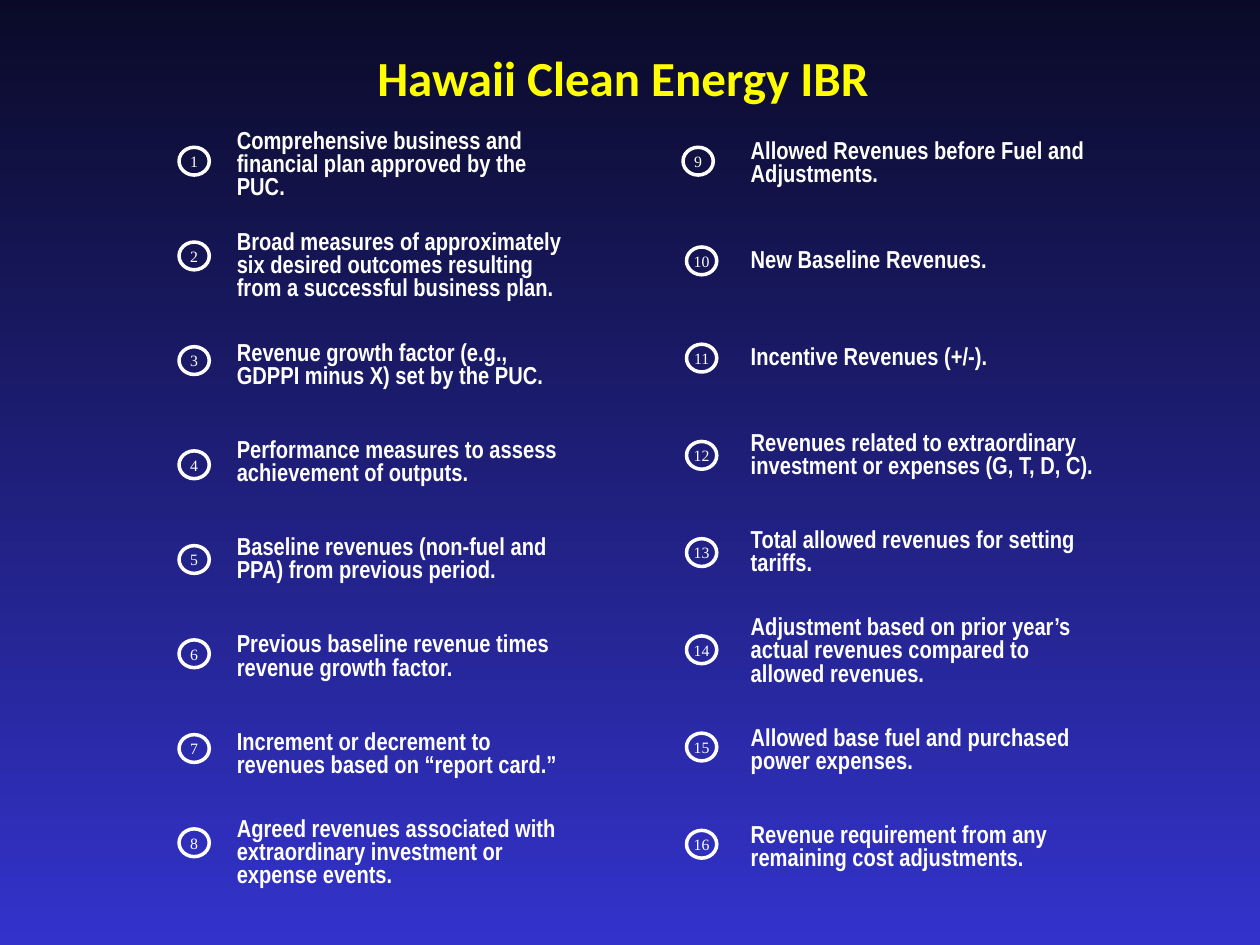
import dataclasses

import pptx
import pptx.dml.color
import pptx.enum.shapes
import pptx.enum.text
import pptx.oxml.ns
import pptx.util

Cm = pptx.util.Cm
Pt = pptx.util.Pt
Rgb = pptx.dml.color.RGBColor
Align = pptx.enum.text.PP_ALIGN
Anchor = pptx.enum.text.MSO_ANCHOR


@dataclasses.dataclass(frozen=True)
class TextStyle:
    """Typeface, size, colour and weight of one kind of text."""
    font: str
    size: int
    color: str
    bold: bool


@dataclasses.dataclass(frozen=True)
class Theme:
    """Colours and text styles of the slide."""
    top: str = "0A0A28"
    bottom: str = "3333CC"
    outline: str = "FFFFFF"
    title: TextStyle = TextStyle("Calibri", 28, "FFFF00", True)
    item: TextStyle = TextStyle("Arial Narrow", 14, "FFFFFF", True)
    number: TextStyle = TextStyle("Times New Roman", 9, "FFFFFF", False)


THEME = Theme()
NO_GRID_STYLE = "{2D5ABB26-0587-4C30-8999-92F81FD0307C}"
ROW_HEIGHT, TALL_ROW_HEIGHT = 1.96, 2.03
LEFT_ITEMS = [
    "Comprehensive business and financial plan approved by the PUC.",
    "Broad measures of approximately six desired outcomes resulting from a successful business plan.",
    "Revenue growth factor (e.g., GDPPI minus X) set by the PUC.",
    "Performance measures to assess achievement of outputs.",
    "Baseline revenues (non-fuel and PPA) from previous period.",
    "Previous baseline revenue times revenue growth factor.",
    "Increment or decrement to revenues based on “report card.”",
    "Agreed revenues associated with extraordinary investment or expense events.",
]
RIGHT_ITEMS = [
    "Allowed Revenues before Fuel and Adjustments.",
    "New Baseline Revenues.",
    "Incentive Revenues (+/-).",
    "Revenues related to extraordinary investment or expenses (G, T, D, C).",
    "Total allowed revenues for setting tariffs.",
    "Adjustment based on prior year’s actual revenues compared to allowed revenues.",
    "Allowed base fuel and purchased power expenses.",
    "Revenue requirement from any remaining cost adjustments.",
]


def paint_background(page):
    """Fill the page with a vertical gradient."""
    fill = page.background.fill
    fill.gradient()
    fill.gradient_angle = 270
    for stop, color, position in zip(fill.gradient_stops, (THEME.top, THEME.bottom), (0, 1)):
        stop.color.rgb = Rgb.from_string(color)
        stop.position = position


def write(frame, text, style, align=Align.LEFT):
    """Write one styled run into the frame's first paragraph."""
    para = frame.paragraphs[0]
    para.alignment = align
    span = para.add_run()
    span.text = text
    span.font.name = style.font
    span.font.size = Pt(style.size)
    span.font.bold = style.bold
    span.font.color.rgb = Rgb.from_string(style.color)


def add_title(page, text):
    """Add the centred slide title."""
    box = page.shapes.add_textbox(Cm(3.18), Cm(0.84), Cm(18.75), Cm(1.45))
    box.text_frame.word_wrap = True
    write(box.text_frame, text, THEME.title, Align.CENTER)


def add_items(page, left, width, items, tall_rows):
    """Add a borderless one-column table of items."""
    heights = [TALL_ROW_HEIGHT if row in tall_rows else ROW_HEIGHT for row in range(len(items))]
    table = page.shapes.add_table(
        len(items), 1, Cm(left), Cm(2.34), Cm(width), Cm(sum(heights))
    ).table
    table.first_row = table.horz_banding = False
    table._tbl.tblPr.find(pptx.oxml.ns.qn("a:tableStyleId")).text = NO_GRID_STYLE
    for row, (item, height) in enumerate(zip(items, heights)):
        table.rows[row].height = Cm(height)
        cell = table.cell(row, 0)
        cell.fill.background()
        cell.vertical_anchor = Anchor.MIDDLE
        write(cell.text_frame, item, THEME.item)


def add_badge(page, left, top, number):
    """Add an outlined ellipse holding an item number."""
    badge = page.shapes.add_shape(
        pptx.enum.shapes.MSO_SHAPE.OVAL, Cm(left), Cm(top), Cm(0.61), Cm(0.56)
    )
    badge.shadow.inherit = False
    badge.fill.background()
    badge.line.color.rgb = Rgb.from_string(THEME.outline)
    badge.line.width = Pt(2)
    frame = badge.text_frame
    frame.margin_left = frame.margin_right = frame.margin_top = frame.margin_bottom = 0
    frame.vertical_anchor = Anchor.MIDDLE
    frame.word_wrap = False
    write(frame, str(number), THEME.number, Align.CENTER)


def main():
    """Build and save the slide."""
    deck = pptx.Presentation()
    deck.slide_width, deck.slide_height = Cm(25.4), Cm(19.05)
    page = deck.slides.add_slide(deck.slide_layouts[6])
    paint_background(page)
    add_title(page, "Hawaii Clean Energy IBR")
    add_items(page, 4.52, 7.34, LEFT_ITEMS, {0, 1, 7})
    add_items(page, 14.88, 7.54, RIGHT_ITEMS, {5})
    left_tops = [2.97, 4.88, 6.99, 9.09, 11, 12.9, 14.81, 16.71]
    for number, top in enumerate(left_tops, 1):
        add_badge(page, 3.61, top, number)
    add_badge(page, 13.77, 2.97, 9)
    for step in range(7):
        add_badge(page, 13.84, 4.98 + ROW_HEIGHT * step, 10 + step)
    deck.save("out.pptx")


if __name__ == "__main__":
    main()
